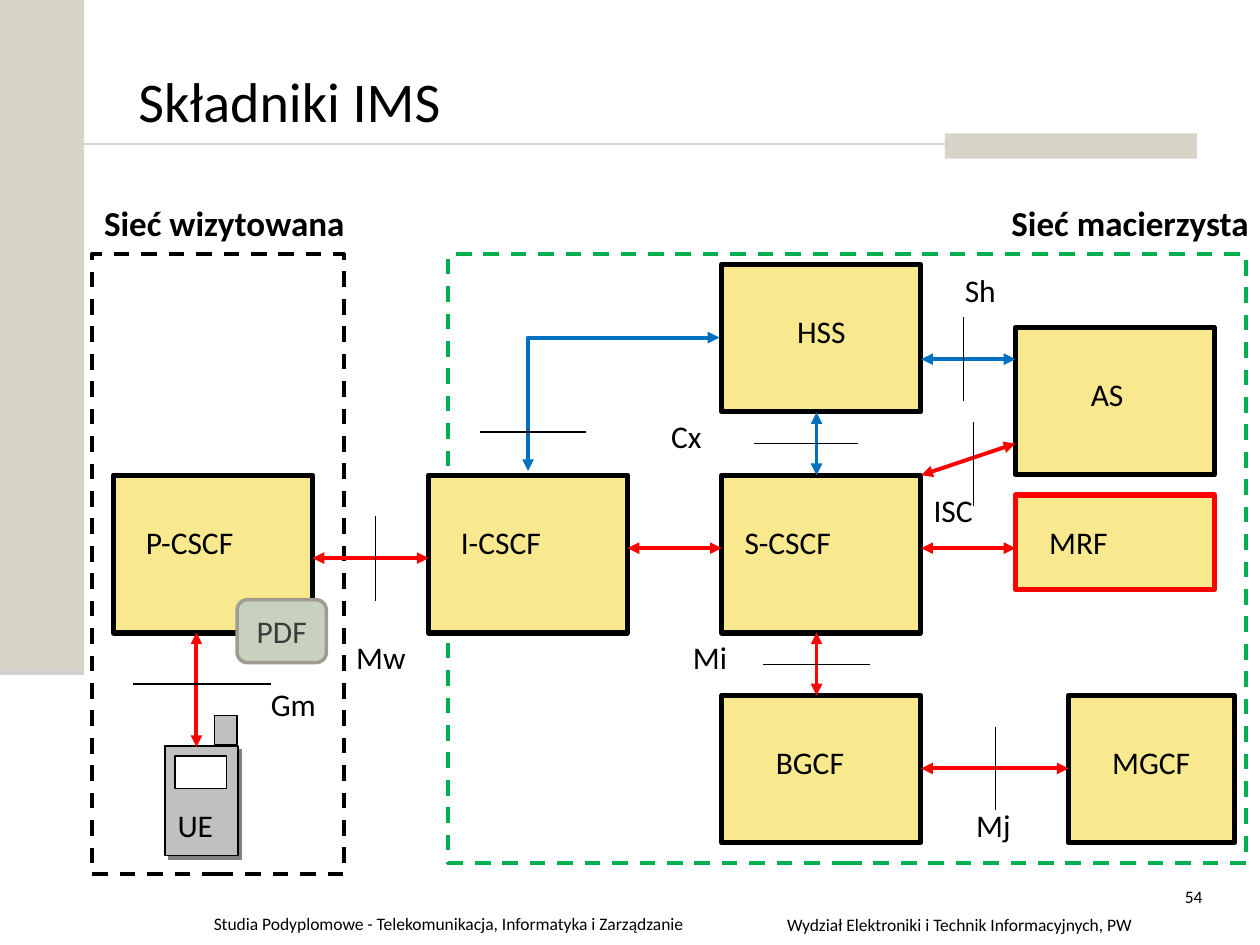
from lxml import etree
from pptx import Presentation
from pptx import util as u
from pptx.dml.color import RGBColor
from pptx.enum import dml, shapes, text
from pptx.oxml import ns

BLACK = RGBColor(0x00, 0x00, 0x00)
WHITE = RGBColor(0xFF, 0xFF, 0xFF)
RED = RGBColor(0xFF, 0x00, 0x00)
BLUE = RGBColor(0x00, 0x70, 0xC0)
GREEN = RGBColor(0x00, 0xB0, 0x50)
YELLOW = RGBColor(0xF9, 0xE9, 0x8E)
SILVER = RGBColor(0xC0, 0xC0, 0xC0)
BEIGE = RGBColor(0xD8, 0xD3, 0xC7)
RULE = RGBColor(0xD4, 0xD2, 0xD0)
SAGE = RGBColor(0xC8, 0xD0, 0xBE)
SAGE_EDGE = RGBColor(0xA0, 0x9C, 0x93)
CHARCOAL = RGBColor(0x3B, 0x3B, 0x3B)

LABEL_HEIGHT = 1.02
BODY = {"size": u.Pt(18), "name": "Calibri"}
HEADING = {"size": u.Pt(20), "name": "Calibri", "bold": True}
TITLE = {"size": u.Pt(32), "name": "Calibri"}
SMALL = {"size": u.Pt(10), "name": "Calibri"}
FIT = {"word_wrap": False, "auto_size": text.MSO_AUTO_SIZE.SHAPE_TO_FIT_TEXT}
WRAP = {"word_wrap": True}
MIDDLE = {"word_wrap": True, "vertical_anchor": text.MSO_ANCHOR.MIDDLE}

NODES = [
    ("P-CSCF", 2.29, 9.58, 4.01, 3.18, BLACK, 0.4, 0.83, 2.31),
    ("S-CSCF", 14.55, 9.58, 4.01, 3.18, BLACK, 0.21, 0.83, 2.29),
    ("MGCF", 21.54, 14.02, 3.35, 2.97, BLACK, 0.63, 0.83, 2.11),
    ("BGCF", 14.55, 14.02, 4.01, 2.97, BLACK, 0.84, 0.83, 1.91),
    ("HSS", 14.55, 5.33, 4.01, 2.97, BLACK, 1.27, 0.83, 1.5),
    ("I-CSCF", 8.64, 9.58, 4.01, 3.18, BLACK, 0.4, 0.83, 2.13),
    ("AS", 20.47, 6.6, 4.01, 2.97, BLACK, 1.27, 0.83, 1.17),
    ("MRF", 20.47, 9.98, 4.01, 1.91, RED, 0.43, 0.43, 1.7),
]
LINKS = [
    (3.96, 15.06, 3.96, 12.75, RED),
    (6.3, 11.25, 8.64, 11.25, RED),
    (12.65, 11.05, 14.55, 11.05, RED),
    (18.57, 15.49, 21.54, 15.49, RED),
    (16.46, 14.02, 16.46, 12.75, RED),
    (16.46, 9.58, 16.46, 8.31, BLUE),
    (18.57, 11.05, 20.47, 11.05, RED),
    (18.57, 9.58, 20.47, 8.94, RED),
    (18.57, 7.24, 20.47, 7.24, BLUE),
]
INTERFACE_TICKS = [
    (2.69, 13.79, 5.46, 13.79),
    (7.57, 10.41, 7.57, 12.12),
    (19.63, 8.51, 19.63, 10.21),
    (20.07, 14.66, 20.07, 16.33),
    (15.39, 13.39, 17.53, 13.39),
    (15.19, 8.94, 17.3, 8.94),
    (9.68, 8.71, 11.81, 8.71),
    (19.43, 6.4, 19.43, 8.08),
]
INTERFACE_NAMES = [
    ("Gm", 5.21, 13.69, 1.42),
    ("Mw", 6.93, 12.73, 1.5),
    ("ISC", 18.57, 9.78, 1.32),
    ("Mj", 19.43, 16.13, 1.22),
    ("Mi", 13.72, 12.73, 1.22),
    ("Cx", 13.28, 8.28, 1.14),
    ("Sh", 19.2, 5.33, 1.14),
]


def apply_format(target, values):
    for name, value in values.items():
        setattr(target, name, value)


def write_text(shape, content, font, frame, color=BLACK, align=text.PP_ALIGN.LEFT):
    apply_format(shape.text_frame, frame)
    paragraph = shape.text_frame.paragraphs[0]
    paragraph.alignment = align
    run = paragraph.add_run()
    run.text = content
    apply_format(run.font, font)
    run.font.color.rgb = color


def add_text(slide, content, box, font=BODY, frame=FIT, align=text.PP_ALIGN.LEFT):
    shape = slide.shapes.add_textbox(*map(u.Cm, box))
    write_text(shape, content, font, frame, align=align)


def add_box(slide, box, fill=None, line=None, width=0.75, dash=None,
            kind=shapes.MSO_SHAPE.RECTANGLE):
    shape = slide.shapes.add_shape(kind, *map(u.Cm, box))
    shape.shadow.inherit = False
    if fill is None:
        shape.fill.background()
    else:
        shape.fill.solid()
        shape.fill.fore_color.rgb = fill
    if line is None:
        shape.line.fill.background()
    else:
        shape.line.color.rgb = line
        apply_format(shape.line, {"width": u.Pt(width), "dash_style": dash})
    return shape


def add_line(slide, ends, color=BLACK, width=0.75, arrows=False,
             kind=shapes.MSO_CONNECTOR.STRAIGHT):
    connector = slide.shapes.add_connector(kind, *map(u.Cm, ends))
    connector.line.color.rgb = color
    connector.line.width = u.Pt(width)
    if arrows:
        line = connector.line._get_or_add_ln()
        for end in ("a:headEnd", "a:tailEnd"):
            etree.SubElement(line, ns.qn(end), type="triangle")
    etree.SubElement(connector._element.spPr, ns.qn("a:effectLst"))
    return connector


def add_corner_link(slide, ends, color):
    connector = add_line(slide, ends, color, 2.25, True, shapes.MSO_CONNECTOR.ELBOW)
    properties = connector._element.spPr
    properties.find(ns.qn("a:xfrm")).set("rot", str(270 * 60000))
    properties.find(ns.qn("a:prstGeom")).set("prst", "bentConnector2")


def add_hard_shadow(shape, color):
    effects = shape._element.spPr.find(ns.qn("a:effectLst"))
    shadow = etree.SubElement(effects, ns.qn("a:outerShdw"), dist=str(u.Pt(2.8)),
                              dir=str(45 * 60000), algn="ctr", rotWithShape="0")
    etree.SubElement(shadow, ns.qn("a:srgbClr"), val=color)


def add_node(slide, name, left, top, width, height, edge, indent, drop, label_width):
    add_box(slide, (left, top, width, height), YELLOW, edge, 3)
    add_text(slide, name, (left + indent, top + drop, label_width, LABEL_HEIGHT))


def add_phone(slide):
    body = add_box(slide, (3.33, 15.04, 1.47, 2.21), SILVER, BLACK)
    add_hard_shadow(body, "808080")
    add_box(slide, (3.53, 15.24, 1.04, 0.66), WHITE, BLACK)
    add_box(slide, (4.32, 14.43, 0.46, 0.58), SILVER, BLACK)
    add_text(slide, "UE", (3.33, 16.13, 1.24, LABEL_HEIGHT))


def add_page_frame(slide):
    add_box(slide, (0, 0, 1.7, 13.54), BEIGE)
    add_box(slide, (19.05, 2.69, 5.08, 0.51), BEIGE)
    add_line(slide, (1.07, 2.9, 24.13, 2.9), RULE, 1.5)
    add_line(slide, (0, 13.54, 1.7, 13.54), RULE, 3.5)
    add_text(slide, "Składniki IMS", (2.54, 0.71, 21.59, 2.62), TITLE, MIDDLE)
    add_text(slide, "Studia Podyplomowe - Telekomunikacja, Informatyka i Zarządzanie",
             (4.06, 18.29, 11.33, 0.71), SMALL, WRAP)
    add_text(slide, "Wydział Elektroniki i Technik Informacyjnych, PW",
             (15.21, 18.31, 8.26, 0.69), SMALL, WRAP, text.PP_ALIGN.CENTER)
    add_text(slide, "54", (23.27, 17.73, 1.22, 1.27), SMALL, WRAP, text.PP_ALIGN.RIGHT)


def main():
    presentation = Presentation()
    presentation.slide_width = u.Cm(25.4)
    presentation.slide_height = u.Cm(19.05)
    slide = presentation.slides.add_slide(presentation.slide_layouts[6])

    add_page_frame(slide)
    add_phone(slide)
    dash = dml.MSO_LINE.DASH
    add_box(slide, (1.85, 5.13, 5.08, 12.5), None, BLACK, 2.25, dash)
    add_box(slide, (9.04, 5.13, 16.08, 12.27), None, GREEN, 2.25, dash)
    add_text(slide, "Sieć wizytowana", (1.85, 3.94, 5.41, 1.12), HEADING)
    add_text(slide, "Sieć macierzysta", (20.14, 3.94, 5.33, 1.12), HEADING)
    for node in NODES:
        add_node(slide, *node)
    for *ends, color in LINKS:
        add_line(slide, ends, color, 2.25, True)
    add_corner_link(slide, (11.23, 6.22, 13.92, 10.08), BLUE)
    for ends in INTERFACE_TICKS:
        add_line(slide, ends)
    for name, left, top, width in INTERFACE_NAMES:
        add_text(slide, name, (left, top, width, LABEL_HEIGHT))
    pdf = add_box(slide, (4.78, 12.09, 1.8, 1.27), SAGE, SAGE_EDGE, 2,
                  kind=shapes.MSO_SHAPE.ROUNDED_RECTANGLE)
    write_text(pdf, "PDF", BODY, {**MIDDLE, "word_wrap": False}, CHARCOAL,
               text.PP_ALIGN.CENTER)
    presentation.save("out.pptx")


if __name__ == "__main__":
    main()
